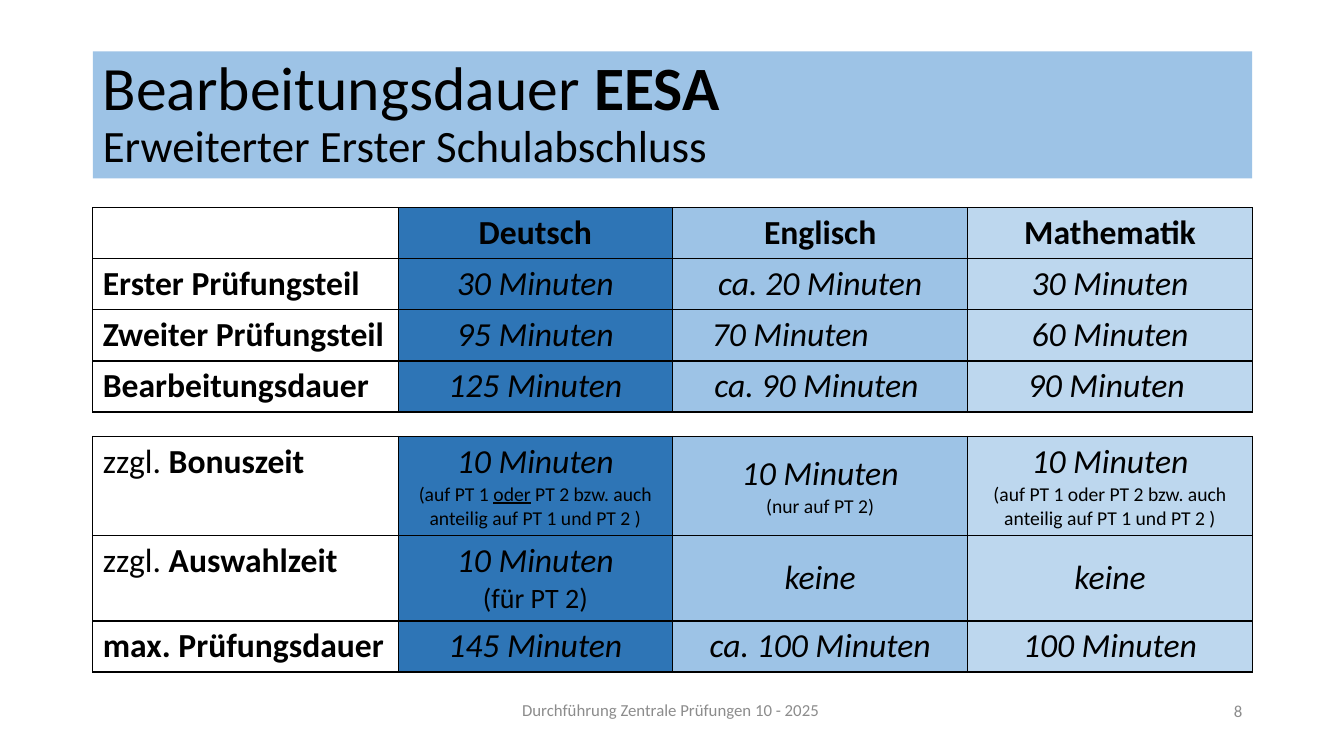
from dataclasses import dataclass

from pptx import Presentation
from pptx.dml.color import RGBColor
from pptx.enum import text
from pptx.oxml import parse_xml
from pptx.oxml.ns import nsdecls
from pptx.util import Inches, Pt


@dataclass(frozen=True)
class Theme:
    font: str = "Calibri"
    ink: str = "000000"
    muted: str = "8C8C8C"
    banner: str = "9DC3E6"
    columns: tuple = (None, "2E75B6", "9DC3E6", "BDD7EE")
    title: int = 44
    subtitle: int = 32
    body: int = 24
    note: int = 20
    small: int = 14
    footer: int = 12


THEME = Theme()
LEFT, WIDTH = 0.92, 11.5
COLUMN_WIDTHS = (3.03, 2.72, 2.93, 2.82)


@dataclass(frozen=True)
class Span:
    words: str
    size: int = THEME.body
    bold: bool = False
    italic: bool = False
    underline: bool = False
    color: str = THEME.ink


@dataclass(frozen=True)
class Para:
    spans: tuple
    align: text.PP_ALIGN = text.PP_ALIGN.CENTER
    indent: float = 0


@dataclass(frozen=True)
class Grid:
    top: float
    heights: tuple
    rows: tuple


# Text helpers
def add_span(para, span: Span) -> None:
    run = para.add_run()
    run.text = span.words
    font = run.font
    font.name, font.size = THEME.font, Pt(span.size)
    font.bold, font.italic, font.underline = span.bold, span.italic, span.underline
    font.color.rgb = RGBColor.from_string(span.color)


def fill_frame(frame, paras: tuple) -> None:
    for index, content in enumerate(paras):
        para = frame.paragraphs[0] if index == 0 else frame.add_paragraph()
        para.alignment = content.align
        if content.indent:
            properties = para._p.get_or_add_pPr()
            properties.set("marL", str(Inches(content.indent)))
            properties.set("indent", "0")
        for span in content.spans:
            add_span(para, span)


def label(*spans: Span) -> tuple:
    return (Para(spans, text.PP_ALIGN.LEFT),)


def strong(words: str) -> Span:
    return Span(words, bold=True)


def heading(words: str) -> tuple:
    return (Para((strong(words),)),)


def duration(words: str, *notes: Span) -> tuple:
    first = Para((Span(words, italic=True),))
    return (first, Para(notes)) if notes else (first,)


def small(words: str, underline: bool = False) -> Span:
    return Span(words, THEME.small, underline=underline)


# Table helpers
def add_borders(cell) -> None:
    properties = cell._tc.get_or_add_tcPr()
    for side in ("lnL", "lnR", "lnT", "lnB"):
        properties.append(parse_xml(
            f'<a:{side} {nsdecls("a")} w="{Pt(1)}"><a:solidFill>'
            f'<a:srgbClr val="{THEME.ink}"/></a:solidFill></a:{side}>'))


def add_grid(page, grid: Grid) -> None:
    frame = page.shapes.add_table(
        len(grid.rows), len(COLUMN_WIDTHS), Inches(LEFT), Inches(grid.top),
        Inches(WIDTH), Inches(sum(grid.heights)))
    table = frame.table
    table.first_row = table.horz_banding = False
    for column, width in zip(table.columns, COLUMN_WIDTHS):
        column.width = Inches(width)
    for row, height, contents in zip(table.rows, grid.heights, grid.rows):
        row.height = Inches(height)
        for cell, color, paras in zip(row.cells, THEME.columns, contents):
            add_borders(cell)
            if color:
                cell.fill.solid()
                cell.fill.fore_color.rgb = RGBColor.from_string(color)
                cell.vertical_anchor = text.MSO_ANCHOR.MIDDLE
            else:
                cell.fill.background()
            fill_frame(cell.text_frame, paras)


# Page parts
def add_title(page) -> None:
    title = page.shapes.title
    title.left, title.top = Inches(LEFT), Inches(0.51)
    title.width, title.height = Inches(WIDTH), Inches(1.26)
    title.fill.solid()
    title.fill.fore_color.rgb = RGBColor.from_string(THEME.banner)
    frame = title.text_frame
    frame.auto_size = text.MSO_AUTO_SIZE.NONE
    frame.vertical_anchor = text.MSO_ANCHOR.MIDDLE
    para = frame.paragraphs[0]
    para.alignment, para.line_spacing = text.PP_ALIGN.LEFT, 0.9
    add_span(para, Span("Bearbeitungsdauer ", THEME.title))
    add_span(para, Span("EESA", THEME.title, bold=True))
    para.add_line_break()
    add_span(para, Span("Erweiterter Erster Schulabschluss", THEME.subtitle))


def add_footer(page, words: str, left: float, top: float, width: float,
               height: float, align: text.PP_ALIGN) -> None:
    box = page.shapes.add_textbox(
        Inches(left), Inches(top), Inches(width), Inches(height))
    box.text_frame.word_wrap = True
    box.text_frame.vertical_anchor = text.MSO_ANCHOR.MIDDLE
    span = Span(words, THEME.footer, color=THEME.muted)
    fill_frame(box.text_frame, (Para((span,), align),))


EXAM_PARTS = Grid(2.06, (0.5,) * 4, (
    ((), heading("Deutsch"), heading("Englisch"), heading("Mathematik")),
    (label(strong("Erster Prüfungsteil")), duration("30 Minuten"),
     duration("ca. 20 Minuten"), duration("30 Minuten")),
    (label(strong("Zweiter Prüfungsteil")), duration("95 Minuten"),
     (Para((Span("70 Minuten", italic=True),), text.PP_ALIGN.LEFT, 0.29),),
     duration("60 Minuten")),
    (label(strong("Bearbeitungsdauer")), duration("125 Minuten"),
     duration("ca. 90 Minuten "), duration("90 Minuten ")),
))

EXTRA_TIME = Grid(4.33, (0.97, 0.85, 0.5), (
    (label(Span("zzgl. "), strong("Bonuszeit")),
     duration("10 Minuten", small("(auf PT 1 "), small("oder", True),
              small(" PT 2 bzw. auch anteilig auf PT 1 und PT 2 )")),
     duration("10 Minuten", small("(nur auf PT 2)")),
     duration("10 Minuten", small(
         "(auf PT 1 oder PT 2 bzw. auch anteilig auf PT 1 und PT 2 )"))),
    (label(Span("zzgl."), strong(" Auswahlzeit")),
     duration("10 Minuten", Span("(für PT 2)", THEME.note)),
     duration("keine"), duration("keine")),
    (label(strong("max. Prüfungsdauer")), duration("145 Minuten"),
     duration("ca. 100 Minuten"), duration("100 Minuten")),
))


def main() -> None:
    deck = Presentation()
    deck.slide_width, deck.slide_height = Inches(13.33), Inches(7.5)
    page = deck.slides.add_slide(deck.slide_layouts[5])
    add_title(page)
    for grid in (EXAM_PARTS, EXTRA_TIME):
        add_grid(page, grid)
    add_footer(page, "Durchführung Zentrale Prüfungen 10 - 2025",
               5.08, 6.89, 3.17, 0.3, text.PP_ALIGN.LEFT)
    add_footer(page, "8", 9.42, 6.85, 3, 0.4, text.PP_ALIGN.RIGHT)
    deck.save("out.pptx")


if __name__ == "__main__":
    main()
